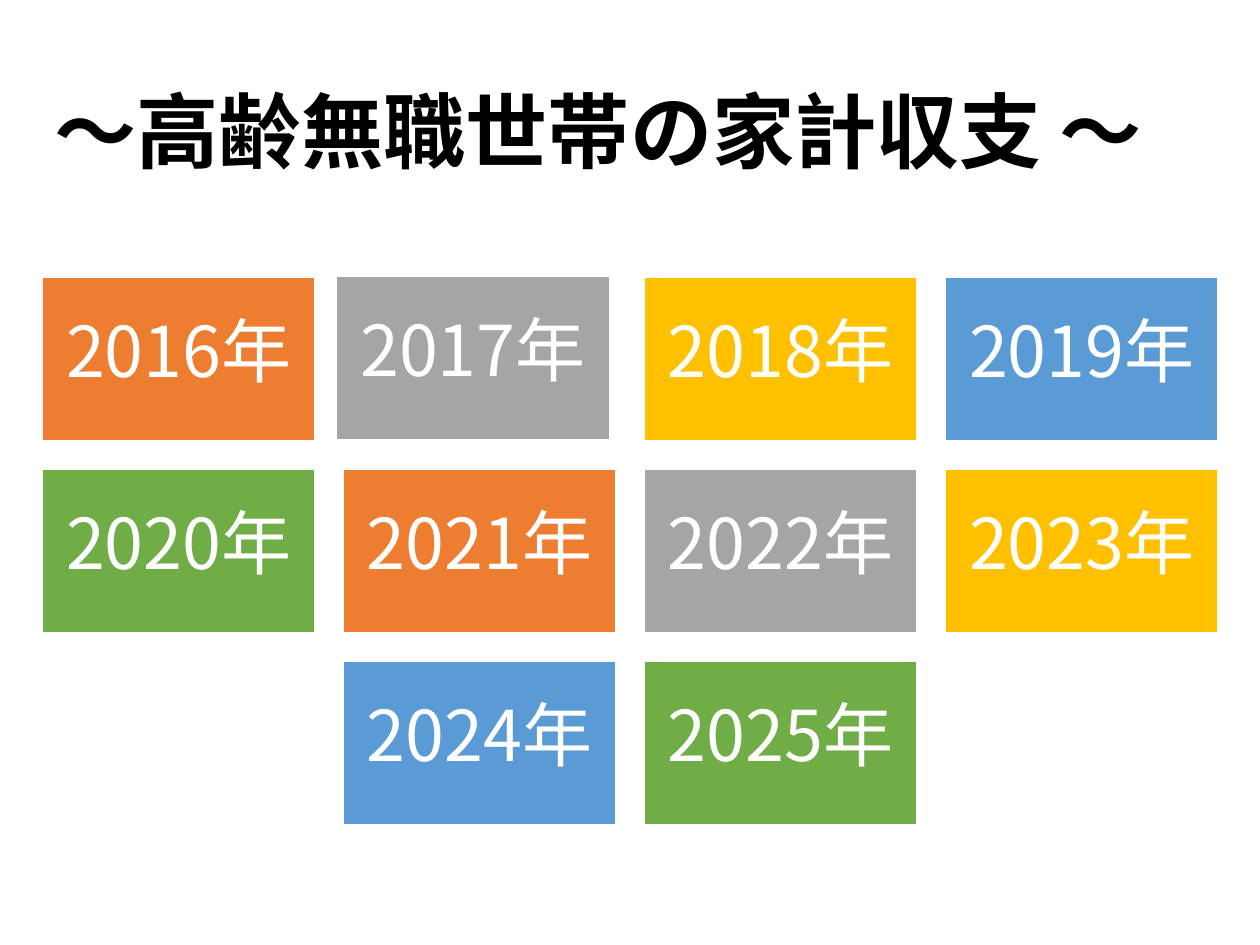
"""Build the household budget title slide with its ten year tiles."""
from lxml import etree
from pptx import Presentation
from pptx import util as u
from pptx.dml.color import RGBColor
from pptx.enum import shapes, text
from pptx.oxml.ns import qn

TITLE = "～高齢無職世帯の家計収支 ～"
YEARS = [
    [2016, 2017, 2018, 2019],
    [2020, 2021, 2022, 2023],
    [None, 2024, 2025, None],
]
SHIFT = {2017: (-3.8, -0.7)}
THEME = {
    "font": "Noto Sans CJK JP",
    "ink": "000000",
    "paper": "FFFFFF",
    "tiles": ["ED7D31", "A5A5A5", "FFC000", "5B9BD5", "70AD47"],
    "title": 47,
    "year": 40,
}
LEFT, TOP, WIDE, HIGH = 24, 158.4, 156.2, 93.6
STEP_X, STEP_Y = 172, 109.6


def color(code):
    """Return the colour for a hex code."""
    return RGBColor.from_string(code)


def write(shape, words, inset, para, font, ink):
    """Set one formatted paragraph in the middle of a shape."""
    frame = shape.text_frame
    form = {"word_wrap": True, "vertical_anchor": text.MSO_ANCHOR.MIDDLE}
    form.update({f"margin_{side}": u.Pt(gap) for side, gap in inset.items()})
    line = frame.paragraphs[0]
    run = line.add_run()
    run.text = words
    font = {"name": THEME["font"], **font}
    for part, vals in ((frame, form), (line, para), (run.font, font)):
        for key, val in vals.items():
            setattr(part, key, val)
    run.font.color.rgb = color(ink)
    east = etree.SubElement(run.font._element, qn("a:ea"))
    east.set("typeface", THEME["font"])


def tile(slide, year, row, col, fill):
    """Draw one year tile in its grid cell."""
    dx, dy = SHIFT.get(year, (0, 0))
    spot = (LEFT + col * STEP_X + dx, TOP + row * STEP_Y + dy, WIDE, HIGH)
    box = slide.shapes.add_shape(shapes.MSO_SHAPE.RECTANGLE, *map(u.Pt, spot))
    box.shadow.inherit = False
    box.fill.solid()
    box.fill.fore_color.rgb = color(fill)
    box.line.color.rgb = color(THEME["paper"])
    box.line.width = u.Pt(1)
    inset = dict.fromkeys(("left", "top", "right", "bottom"), 12)
    para = {"alignment": text.PP_ALIGN.CENTER, "line_spacing": 0.74}
    write(box, f"{year}年", inset, para, {"size": u.Pt(THEME["year"])}, THEME["paper"])


def main():
    """Lay out the title and the tiles, then save."""
    deck = Presentation()
    deck.slide_width, deck.slide_height = u.Pt(720), u.Pt(540)
    slide = deck.slides.add_slide(deck.slide_layouts[6])
    head = slide.shapes.add_textbox(*map(u.Pt, (LEFT, 25.2, 673.9, 104.4)))
    look = {"size": u.Pt(THEME["title"]), "bold": True}
    write(head, TITLE, {}, {"line_spacing": 0.9}, look, THEME["ink"])
    count = 0
    for row, years in enumerate(YEARS):
        for col, year in enumerate(years):
            if year:
                fill = THEME["tiles"][count % len(THEME["tiles"])]
                tile(slide, year, row, col, fill)
                count += 1
    deck.save("out.pptx")


if __name__ == "__main__":
    main()
